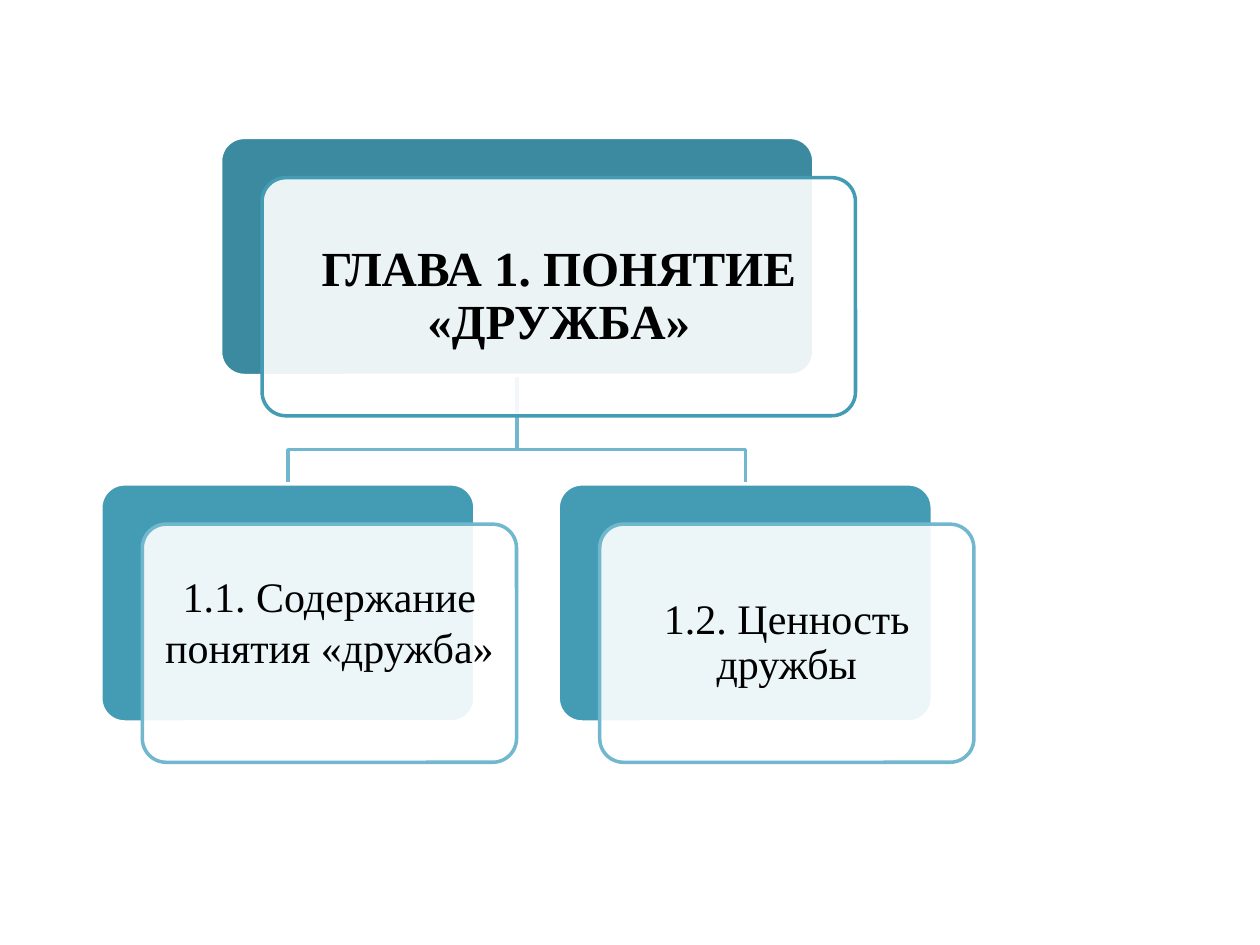
from pptx import Presentation
from pptx.dml.color import RGBColor
from pptx.enum.shapes import MSO_SHAPE
from pptx.enum.text import MSO_ANCHOR, PP_ALIGN
from pptx.oxml.xmlchemy import OxmlElement
from pptx.util import Inches, Pt

COLORS = {
    "white": "FFFFFF",
    "black": "000000",
    "chapter": "3C8A9F",
    "section": "449CB4",
    "link": "71B7CD",
}
FONT = "Times New Roman"
NODE_HEIGHT = 1.89
CARD_OFFSET = (0.33, 0.32)
CHAPTER_BOX = (1.75, 1.09, 4.71, NODE_HEIGHT)
SECTION_WIDTH, SECTION_TOP = 2.97, 3.84
SECTION_LEFT, SECTION_STEP = 0.8, 3.63
BRANCH_Y = 3.57


def rgb(name):
    return RGBColor.from_string(COLORS[name])


def add_panel(s, box, fill, line):
    sp = s.shapes.add_shape(MSO_SHAPE.ROUNDED_RECTANGLE, *map(Inches, box))
    sp.adjustments[0] = 0.1
    sp.shadow.inherit = False
    sp.fill.solid()
    sp.fill.fore_color.rgb = rgb(fill)
    sp.line.color.rgb = rgb(line)
    sp.line.width = Pt(2)
    return sp


def set_opacity(sp, percent):
    alpha = OxmlElement("a:alpha")
    alpha.set("val", str(percent * 1000))
    sp.fill._xPr.find(".//{*}solidFill/{*}srgbClr").append(alpha)


def add_node(s, box, text, fill, line, size, bold=False, inset=0.1, bottom=0.1, spacing=0.9):
    """Coloured panel with a translucent text card shifted over it."""
    left, top, width, height = box
    dx, dy = CARD_OFFSET
    add_panel(s, box, fill, "white")
    card = add_panel(s, (left + dx, top + dy, width, height), "white", line)
    set_opacity(card, 90)

    tf = card.text_frame
    tf.word_wrap = True
    tf.vertical_anchor = MSO_ANCHOR.MIDDLE
    tf.margin_left = tf.margin_right = tf.margin_top = Inches(inset)
    tf.margin_bottom = Inches(bottom)
    tf.text = text
    p = tf.paragraphs[0]
    p.alignment = PP_ALIGN.CENTER
    p.line_spacing = spacing
    font = p.runs[0].font
    font.name, font.size, font.bold = FONT, Pt(size), bold
    font.color.rgb = rgb("black")


def add_branch(s, parent, child):
    """Bent line from the bottom of the parent to the top of the child."""
    x1, y1 = parent[0] + parent[2] / 2, parent[1] + parent[3]
    x2, y2 = child[0] + child[2] / 2, child[1]
    builder = s.shapes.build_freeform(Inches(x1), Inches(y1))
    bends = [(x1, BRANCH_Y), (x2, BRANCH_Y), (x2, y2)]
    builder.add_line_segments([(Inches(x), Inches(y)) for x, y in bends], close=False)
    sp = builder.convert_to_shape()
    sp.shadow.inherit = False
    sp.fill.background()
    sp.line.color.rgb = rgb("link")
    sp.line.width = Pt(2)


def add_hierarchy(s):
    # The first section's text sits higher, so its card has a deeper bottom margin.
    sections = [
        ("1.1. Содержание понятия «дружба»", {"bottom": 0.45, "spacing": 1.0}),
        ("1.2. Ценность дружбы", {}),
    ]
    boxes = [
        (SECTION_LEFT + i * SECTION_STEP, SECTION_TOP, SECTION_WIDTH, NODE_HEIGHT)
        for i in range(len(sections))
    ]
    for box in boxes:
        add_branch(s, CHAPTER_BOX, box)
    add_node(s, CHAPTER_BOX, "ГЛАВА 1. ПОНЯТИЕ «ДРУЖБА»", "chapter", "section",
             28, bold=True, inset=0.12, bottom=0.12)
    for box, (text, layout) in zip(boxes, sections):
        add_node(s, box, text, "section", "link", 24, **layout)


def main():
    prs = Presentation()
    prs.slide_width, prs.slide_height = Inches(10), Inches(7.5)
    s = prs.slides.add_slide(prs.slide_layouts[6])
    add_hierarchy(s)
    prs.save("out.pptx")


if __name__ == "__main__":
    main()
